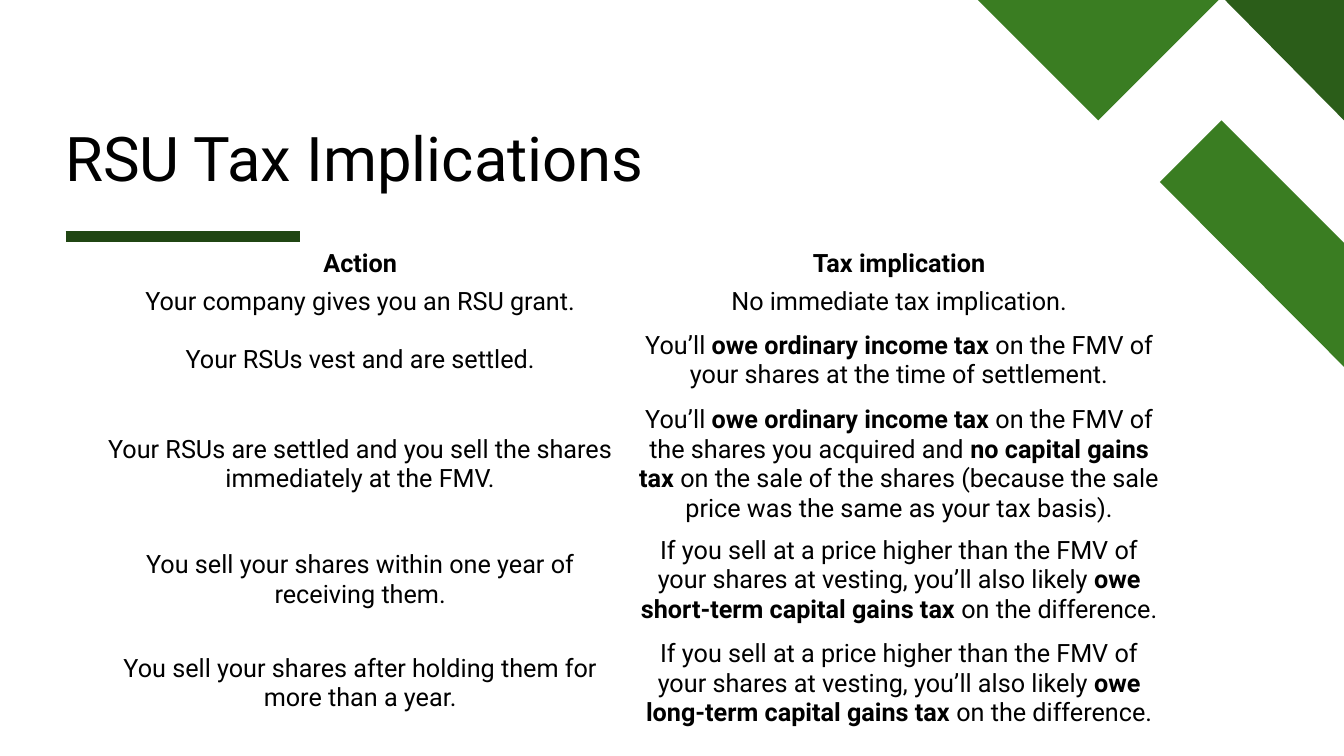
from lxml import etree
from pptx import Presentation
from pptx.dml.color import RGBColor
from pptx.enum.shapes import MSO_CONNECTOR
from pptx.enum.text import MSO_ANCHOR, MSO_AUTO_SIZE, PP_ALIGN
from pptx.oxml.ns import qn
from pptx.util import Pt

STRAIGHT = MSO_CONNECTOR.STRAIGHT
MIDDLE, BOTTOM = MSO_ANCHOR.MIDDLE, MSO_ANCHOR.BOTTOM
LEFT, CENTER = PP_ALIGN.LEFT, PP_ALIGN.CENTER
NO_AUTOFIT = MSO_AUTO_SIZE.NONE

FONT = "Roboto"
BLACK, WHITE = "000000", "FFFFFF"
GREEN, DARK_GREEN, RULE_GREEN = "3A7D22", "2B5D19", "204613"

CORNER_SHAPES = [
    (GREEN, [(960, 262), (960, 173.5), (872.5, 86), (828.5, 130)]),
    (DARK_GREEN, [(960, 86), (960, 0), (875, 0)]),
    (GREEN, [(698.5, 0), (784.5, 86), (870.5, 0)]),
]

ROW_HEIGHTS = [23, 23, 57, 91.5, 74, 74]
TAX_ROWS = [
    ("**Action**", "**Tax implication**"),
    ("Your company gives you an RSU grant.", "No immediate tax implication."),
    ("Your RSUs vest and are settled.",
     "You’ll **owe ordinary income tax** on the FMV of your shares "
     "at the time of settlement."),
    ("Your RSUs are settled and you sell the shares immediately at the FMV.",
     "You’ll **owe ordinary income tax** on the FMV of the shares you acquired "
     "and **no capital gains tax** on the sale of the shares (because the sale "
     "price was the same as your tax basis)."),
    ("You sell your shares within one year of receiving them.",
     "If you sell at a price higher than the FMV of your shares at vesting, "
     "you’ll also likely **owe short-term capital gains tax** on the difference."),
    ("You sell your shares after holding them for more than a year.",
     "If you sell at a price higher than the FMV of your shares at vesting, "
     "you’ll also likely **owe long-term capital gains tax** on the difference."),
]


def color(value):
    """Turn a hex string into a colour."""
    return RGBColor.from_string(value)


def write_text(frame, text, size=18, fill=BLACK, align=LEFT, spacing=1.0):
    """Write one paragraph, with the parts between double asterisks in bold."""
    para = frame.paragraphs[0]
    para.alignment = align
    para.line_spacing = spacing
    for index, part in enumerate(text.split("**")):
        if part:
            span = para.add_run()
            span.text = part
            span.font.name = FONT
            span.font.size = Pt(size)
            span.font.bold = index % 2 == 1
            span.font.color.rgb = color(fill)


def add_polygon(page, fill, points):
    """Draw a filled outline through the given points."""
    corners = [(Pt(x), Pt(y)) for x, y in points]
    builder = page.shapes.build_freeform(*corners[0])
    builder.add_line_segments(corners[1:], close=True)
    polygon = builder.convert_to_shape()
    polygon.shadow.inherit = False
    polygon.fill.solid()
    polygon.fill.fore_color.rgb = color(fill)
    polygon.line.fill.background()


def add_rule(page, left, right, y, stroke, width):
    """Draw a horizontal line."""
    rule = page.shapes.add_connector(STRAIGHT, Pt(left), Pt(y), Pt(right), Pt(y))
    rule.line.color.rgb = color(stroke)
    rule.line.width = Pt(width)
    etree.SubElement(rule._element.spPr, qn("a:effectLst"))


def set_title(page, text):
    """Place and fill the title placeholder."""
    title = page.shapes.title
    title.left, title.top = Pt(46.8), Pt(21.6)
    title.width, title.height = Pt(770), Pt(117.4)
    frame = title.text_frame
    frame.margin_left = frame.margin_right = 0
    frame.margin_top = frame.margin_bottom = 0
    frame.word_wrap = True
    frame.auto_size = NO_AUTOFIT
    frame.vertical_anchor = BOTTOM
    write_text(frame, text, size=44, spacing=0.9)


def add_tax_table(page):
    """Add the two-column table of actions and their tax implications."""
    frame = page.shapes.add_table(len(TAX_ROWS), 2, Pt(64.8), Pt(175),
                                  Pt(770), Pt(sum(ROW_HEIGHTS)))
    table = frame.table
    table.first_row = False
    table.horz_banding = False
    for row, height, texts in zip(table.rows, ROW_HEIGHTS, TAX_ROWS):
        row.height = Pt(height)
        for cell, text in zip(row.cells, texts):
            cell.fill.solid()
            cell.fill.fore_color.rgb = color(WHITE)
            cell.vertical_anchor = MIDDLE
            cell.margin_left = cell.margin_right = Pt(5.8)
            cell.margin_top = cell.margin_bottom = Pt(2.9)
            write_text(cell.text_frame, text, align=CENTER)


def main():
    """Build the slide and save it."""
    deck = Presentation()
    deck.slide_width, deck.slide_height = Pt(960), Pt(540)
    page = deck.slides.add_slide(deck.slide_layouts[5])
    page.background.fill.solid()
    page.background.fill.fore_color.rgb = color(WHITE)
    for fill, points in CORNER_SHAPES:
        add_polygon(page, fill, points)
    add_rule(page, 46.8, 214.6, 169.2, RULE_GREEN, 8)
    set_title(page, "RSU Tax Implications")
    add_tax_table(page)
    deck.save("out.pptx")


if __name__ == "__main__":
    main()
